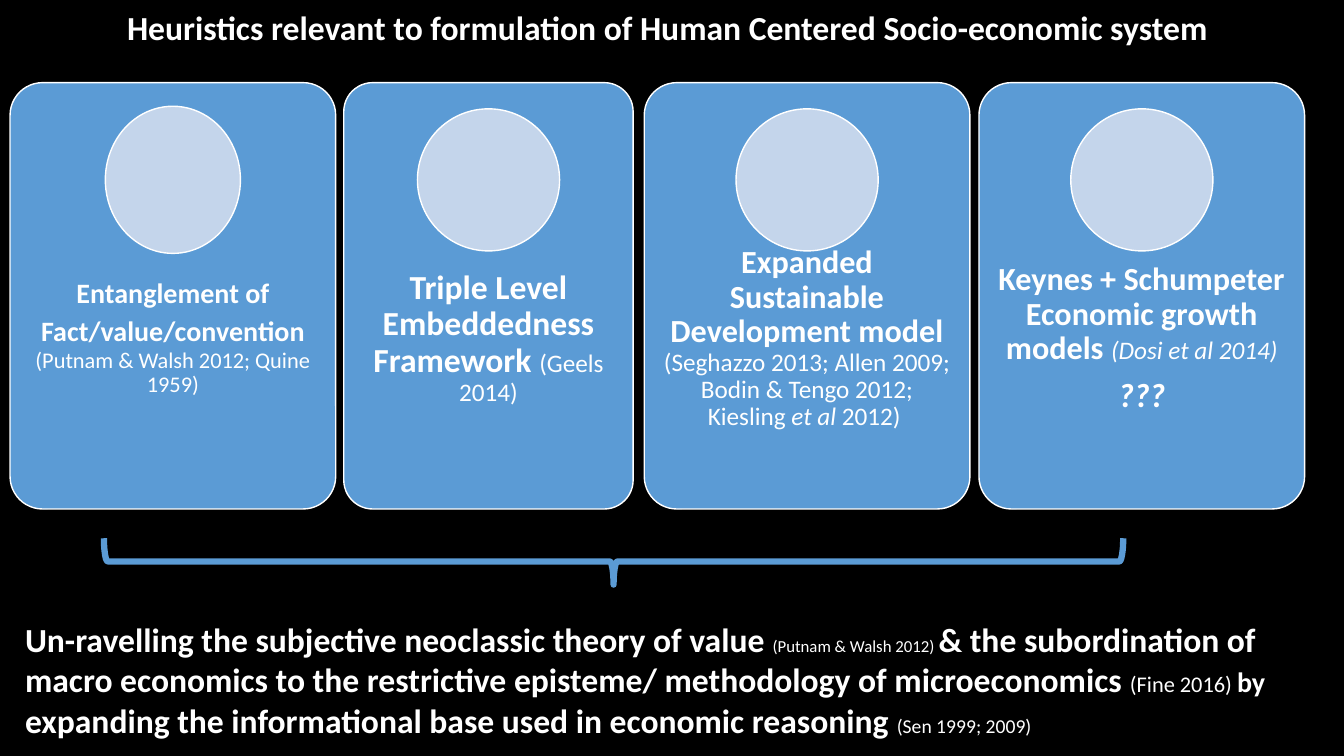
from lxml import etree
from pptx import Presentation, util as u
from pptx.dml.color import RGBColor
from pptx.enum import shapes, text
from pptx.oxml.ns import qn

WIDTH, HEIGHT = 13.33, 7.5
BLACK, WHITE, BLUE, PALE = "000000", "FFFFFF", "5B9BD5", "C4D5EB"
CARD_TOP, CARD_HEIGHT = 0.82, 4.23
LABEL_SHARE, LABEL_HEIGHT = 0.4, 0.4  # shares of the card height

# Each card: left, width, circle size, label inset, paragraphs of (words, format) runs
CARDS = [
    (0.1, 3.23, (1.34, 1.46), 0.16, [[
        ("Entanglement of Fact/value/convention", dict(size=20, bold=True)),
        (" ", dict(size=26)),
        ("(Putnam & Walsh 2012; Quine 1959)", dict(size=16))]]),
    (3.41, 2.87, (1.41, 1.41), 0.19, [[
        ("Triple Level Embeddedness Framework ", dict(size=24, bold=True)),
        ("(Geels 2014)", dict(size=18))]]),
    (6.39, 3.23, (1.41, 1.41), 0.18, [[
        ("Expanded Sustainable Development model ", dict(size=23, bold=True)),
        ("(Seghazzo 2013; Allen 2009; Bodin & Tengo 2012; Kiesling ", dict(size=18)),
        ("et al ", dict(size=18, italic=True)),
        ("2012) ", dict(size=18))]]),
    (9.71, 3.23, (1.41, 1.41), 0.18, [
        [("Keynes + Schumpeter Economic growth models ", dict(size=23, bold=True)),
         ("(Dosi et al 2014)", dict(size=18, italic=True))],
        [("???", dict(size=24, bold=True, italic=True))]]),
]

CONCLUSION = [
    ("Un-ravelling the subjective neoclassic theory of value ", dict(size=24, bold=True)),
    ("(Putnam & Walsh 2012) ", dict(size=12)),
    ("& the subordination of macro economics to the restrictive episteme/ "
     "methodology of microeconomics ", dict(size=24, bold=True)),
    ("(Fine 2016) ", dict(size=16)),
    ("by ", dict(size=20, bold=True)),
    ("expanding the informational base used in economic reasoning ",
     dict(size=24, bold=True)),
    ("(Sen 1999; 2009)", dict(size=14)),
]


def color(value):
    return RGBColor.from_string(value)


def inches(*lengths):
    return [u.Inches(length) for length in lengths]


def add_run(paragraph, words, size=18, bold=False, italic=False, fill=WHITE):
    run = paragraph.add_run()
    run.text = words
    font = run.font
    font.name, font.size = "Calibri", u.Pt(size)
    font.bold, font.italic = bold, italic
    font.color.rgb = color(fill)


def add_figure(slide, kind, box, fill=None, line=WHITE, weight=1):
    shape = slide.shapes.add_shape(kind, *inches(*box))
    shape.shadow.inherit = False
    if fill:
        shape.fill.solid()
        shape.fill.fore_color.rgb = color(fill)
    else:
        shape.fill.background()
    shape.line.color.rgb = color(line)
    shape.line.width = u.Pt(weight)
    return shape


def add_text(slide, box, paragraphs, inset=None, align=text.PP_ALIGN.LEFT,
             anchor=text.MSO_ANCHOR.TOP, spacing=1.0, after=0):
    frame = slide.shapes.add_textbox(*inches(*box)).text_frame
    frame.word_wrap = True
    frame.vertical_anchor = anchor
    if inset is not None:
        frame.margin_left = frame.margin_right = u.Inches(inset)
        frame.margin_top = frame.margin_bottom = u.Inches(inset)
    for index, runs in enumerate(paragraphs):
        paragraph = frame.add_paragraph() if index else frame.paragraphs[0]
        paragraph.alignment, paragraph.line_spacing = align, spacing
        paragraph.space_after = u.Pt(after)
        for words, style in runs:
            add_run(paragraph, words, **style)
    return frame


def add_title(slide, box, words):
    title = slide.shapes.title
    title.left, title.top, title.width, title.height = inches(*box)
    frame = title.text_frame
    frame.word_wrap = True
    frame.auto_size = text.MSO_AUTO_SIZE.NONE
    frame.vertical_anchor = text.MSO_ANCHOR.MIDDLE
    paragraph = frame.paragraphs[0]
    paragraph.alignment, paragraph.line_spacing = text.PP_ALIGN.LEFT, 0.9
    add_run(paragraph, words, size=24, bold=True)


def add_card(slide, box, circle, inset, paragraphs):
    left, top, width, height = box
    card = add_figure(slide, shapes.MSO_SHAPE.ROUNDED_RECTANGLE, box, BLUE)
    card.adjustments[0] = 0.1
    # Label across the middle of the card
    label = (left, top + LABEL_SHARE * height, width, LABEL_HEIGHT * height)
    add_text(slide, label, paragraphs, inset, text.PP_ALIGN.CENTER,
             text.MSO_ANCHOR.MIDDLE, spacing=0.9, after=8)
    # Circle centred above the label
    across, down = circle
    middle = top + 0.228 * height
    add_figure(slide, shapes.MSO_SHAPE.OVAL,
               (left + (width - across) / 2, middle - down / 2, across, down), PALE)


def add_brace(slide, box):
    # A right brace turned a quarter so that it opens upwards
    left, top, width, height = box
    upright = (left + (width - height) / 2, top + (height - width) / 2, height, width)
    brace = add_figure(slide, shapes.MSO_SHAPE.RIGHT_BRACE, upright,
                       line=BLUE, weight=4.5)
    brace.rotation = 90


def add_conclusion(slide, box):
    frame = add_text(slide, box, [CONCLUSION])
    frame.auto_size = text.MSO_AUTO_SIZE.SHAPE_TO_FIT_TEXT


def main():
    presentation = Presentation()
    presentation.slide_width, presentation.slide_height = inches(WIDTH, HEIGHT)
    slide = presentation.slides.add_slide(presentation.slide_layouts[5])
    slide.background.fill.solid()
    slide.background.fill.fore_color.rgb = color(BLACK)

    add_title(slide, (1.16, -0.43, 11.5, 1.45),
              "Heuristics relevant to formulation of Human Centered Socio-economic system")
    for left, width, circle, inset, paragraphs in CARDS:
        add_card(slide, (left, CARD_TOP, width, CARD_HEIGHT), circle, inset, paragraphs)
    add_brace(slide, (1.03, 5.34, 10.11, 0.46))
    add_conclusion(slide, (0.15, 6.09, 12.51, 1.31))
    presentation.save("out.pptx")


if __name__ == "__main__":
    main()
